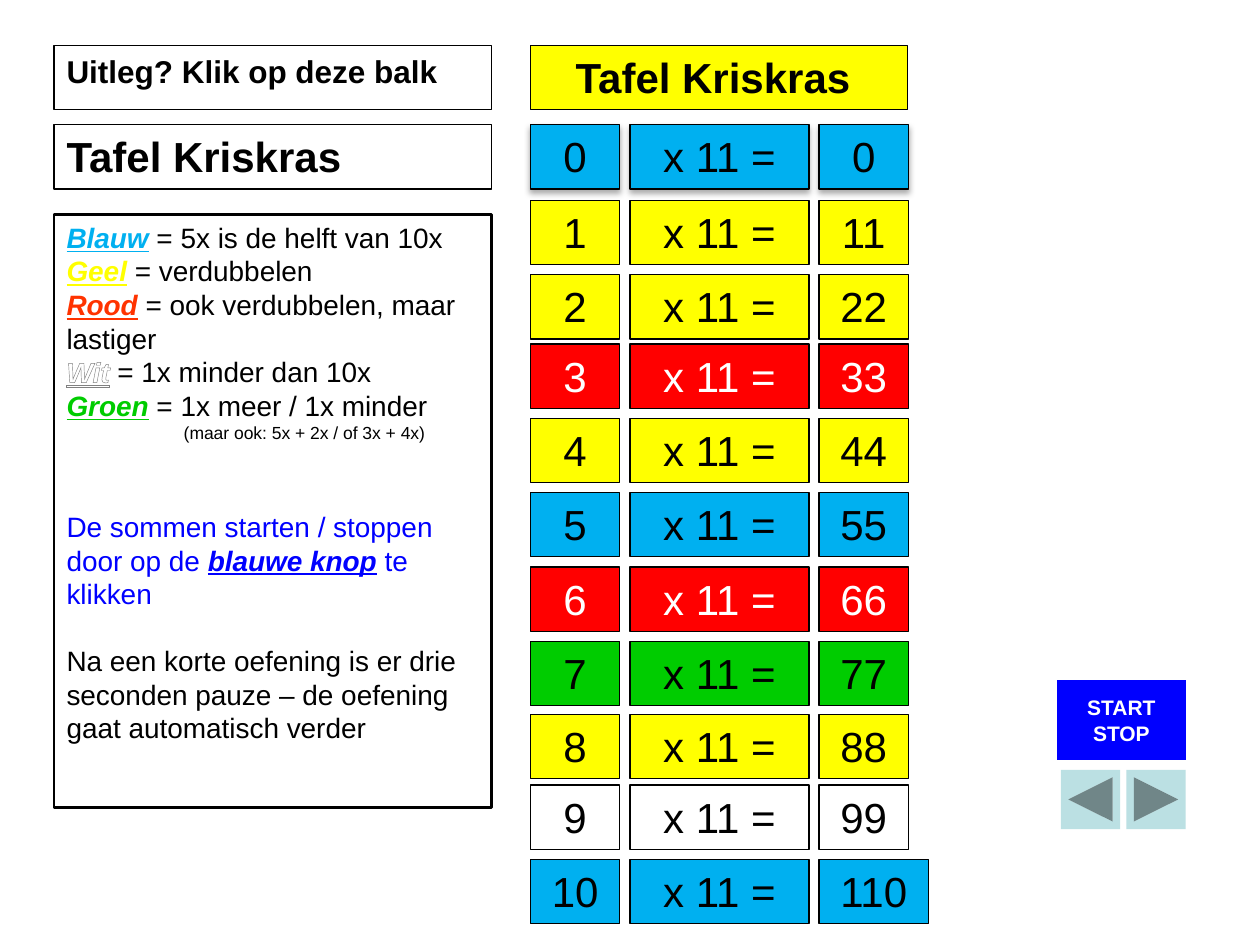
from lxml.etree import SubElement
from pptx import Presentation
from pptx.dml.color import RGBColor
from pptx.enum.shapes import MSO_SHAPE
from pptx.enum.text import MSO_ANCHOR, PP_ALIGN
from pptx.oxml import parse_xml
from pptx.oxml.ns import nsdecls, qn
from pptx.util import Inches, Pt

THEME = {
    "font": "Arial",
    "black": "000000", "white": "FFFFFF", "blue": "00B0F0", "yellow": "FFFF00",
    "red": "FF0000", "green": "00CC00", "orange": "FF3300", "button": "0000FF",
    "arrow": "BBE0E3", "outline": "808080",
    "sum": 24, "bar": 18, "body": 16, "label": 12, "note": 10,
}

FACTOR = 11
# Top of the row and its colour; the row number is the multiplier
ROWS = [
    (0.99, "blue"), (1.59, "yellow"), (2.18, "yellow"), (2.73, "red"),
    (3.32, "yellow"), (3.91, "blue"), (4.5, "red"), (5.09, "green"),
    (5.67, "yellow"), (6.23, "white"), (6.82, "blue"),
]
ROW_HEIGHT = 0.51
COLUMNS = [(4.21, 0.71), (5, 1.42), (6.5, 0.71)]
WIDE_ANSWER = 0.87

# text, left, top, width, fill, size, alignment
HEADERS = [
    ("Uitleg? Klik op deze balk", 0.43, 0.36, 3.47, None, "bar", PP_ALIGN.LEFT),
    ("Tafel Kriskras", 0.43, 0.99, 3.47, None, "sum", PP_ALIGN.LEFT),
    ("Tafel Kriskras ", 4.21, 0.36, 2.99, "yellow", "sum", PP_ALIGN.CENTER),
]

# Each paragraph: spans (text, colour, emphasised), size, blank lines above, indent
EXPLANATION = [
    ([("Blauw", "blue", True), (" = 5x is de helft van 10x", "black", False)], "body", 0, 0),
    ([("Geel", "yellow", True), (" = verdubbelen", "black", False)], "body", 0, 0),
    ([("Rood", "orange", True),
      (" = ook verdubbelen, maar lastiger", "black", False)], "body", 0, 0),
    ([("Wit", "hatched", True), (" = 1x minder dan 10x", "black", False)], "body", 0, 0),
    ([("Groen", "green", True), (" = 1x meer / 1x minder", "black", False)], "body", 0, 0),
    ([("(maar ook: 5x + 2x / of 3x + 4x)", "black", False)], "note", 0, 0.93),
    ([("De sommen starten / stoppen door op de ", "button", False),
      ("blauwe knop", "button", True), (" te klikken", "button", False)], "body", 2, 0),
    ([("Na een korte oefening is er drie seconden pauze – "
       "de oefening gaat automatisch verder", "black", False)], "body", 1, 0),
]
BLANK_LINE = 19

ARROW_BUTTONS = [
    (MSO_SHAPE.ACTION_BUTTON_BACK_OR_PREVIOUS, 8.42),
    (MSO_SHAPE.ACTION_BUTTON_FORWARD_OR_NEXT, 8.94),
]


def color(name):
    return RGBColor.from_string(THEME[name])


def add_box(page, left, top, width, height, fill, line=0.75, kind=MSO_SHAPE.RECTANGLE):
    box = page.shapes.add_shape(
        kind, Inches(left), Inches(top), Inches(width), Inches(height))
    box.shadow.inherit = False
    if fill:
        box.fill.solid()
        box.fill.fore_color.rgb = color(fill)
    else:
        box.fill.background()
    if line:
        box.line.color.rgb = color("black")
        box.line.width = Pt(line)
    else:
        box.line.fill.background()
    box.text_frame.word_wrap = True
    box.text_frame.vertical_anchor = MSO_ANCHOR.TOP
    return box


def write(para, text, size, ink="black", bold=False, align=PP_ALIGN.CENTER):
    para.text = text
    para.alignment = align
    font = para.font
    font.name, font.size, font.bold = THEME["font"], Pt(THEME[size]), bold
    font.color.rgb = color(ink)


def add_soft_shadow(box):
    effects = box._element.spPr.find(qn("a:effectLst"))
    shadow = SubElement(effects, qn("a:outerShdw"), blurRad=str(Pt(3.5)),
                        dist=str(Pt(2.2)), dir="5400000", rotWithShape="0")
    ink = SubElement(shadow, qn("a:srgbClr"), val=THEME["black"])
    SubElement(ink, qn("a:alpha"), val="32000")


def hatch(span):
    """Give white text a grey outline and a white pattern fill."""
    properties = span._r.get_or_add_rPr()
    white = f'<a:srgbClr val="{THEME["white"]}"/>'
    properties.insert(0, parse_xml(
        f'<a:ln {nsdecls("a")} w="{Pt(1)}"><a:solidFill>'
        f'<a:srgbClr val="{THEME["outline"]}"/></a:solidFill></a:ln>'))
    properties.insert(1, parse_xml(
        f'<a:pattFill {nsdecls("a")} prst="narHorz"><a:fgClr>{white}</a:fgClr>'
        f'<a:bgClr>{white}</a:bgClr></a:pattFill>'))


def add_sums(page):
    for number, (top, fill) in enumerate(ROWS):
        answer = number * FACTOR
        ink = "white" if fill == "red" else "black"
        texts = (str(number), f"x {FACTOR} =", str(answer))
        for column, (text, (left, width)) in enumerate(zip(texts, COLUMNS)):
            if column == 2 and answer >= 100:
                width = WIDE_ANSWER
            box = add_box(page, left, top, width, ROW_HEIGHT, fill)
            write(box.text_frame.paragraphs[0], text, "sum", ink)
            if number == 0:
                add_soft_shadow(box)


def add_explanation(page):
    frame = add_box(page, 0.43, 1.7, 3.47, 4.71, "white", 1.5).text_frame
    for index, (spans, size, blank_lines, indent) in enumerate(EXPLANATION):
        para = frame.add_paragraph() if index else frame.paragraphs[0]
        para.alignment = PP_ALIGN.LEFT
        para.font.name, para.font.size = THEME["font"], Pt(THEME[size])
        para.space_before = Pt(blank_lines * BLANK_LINE)
        para._p.get_or_add_pPr().set("marL", str(Inches(indent)))
        for text, ink, emphasised in spans:
            span = para.add_run()
            span.text = text
            font = span.font
            font.bold = font.italic = font.underline = emphasised
            if ink == "hatched":
                hatch(span)
            else:
                font.color.rgb = color(ink)


def add_buttons(page):
    for kind, left in ARROW_BUTTONS:
        add_box(page, left, 6.11, 0.47, 0.47, "arrow", None, kind)
    frame = add_box(page, 8.39, 5.4, 1.02, 0.63, "button", None,
                    MSO_SHAPE.ACTION_BUTTON_CUSTOM).text_frame
    frame.word_wrap = False
    frame.vertical_anchor = MSO_ANCHOR.MIDDLE
    write(frame.paragraphs[0], "START", "label", "white", True)
    write(frame.add_paragraph(), "STOP", "label", "white", True)


def main():
    deck = Presentation()
    deck.slide_width, deck.slide_height = Inches(10), Inches(7.5)
    page = deck.slides.add_slide(deck.slide_layouts[6])
    for text, left, top, width, fill, size, align in HEADERS:
        box = add_box(page, left, top, width, ROW_HEIGHT, fill)
        write(box.text_frame.paragraphs[0], text, size, bold=True, align=align)
    add_explanation(page)
    add_sums(page)
    add_buttons(page)
    deck.save("out.pptx")


if __name__ == "__main__":
    main()
